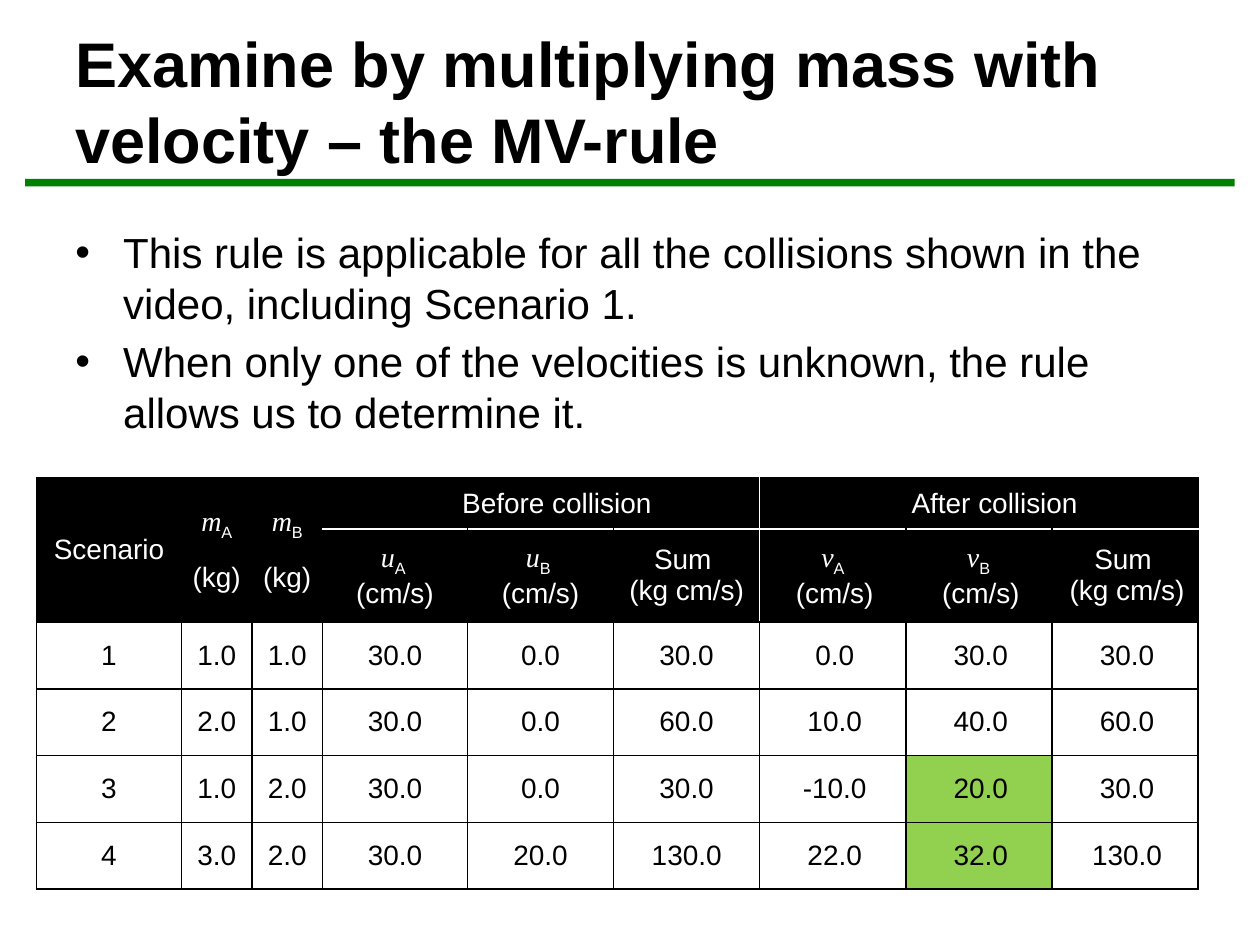
"""Build the slide on the MV-rule with its table of collisions."""
from dataclasses import dataclass

from lxml import etree
from pptx import Presentation
from pptx.dml.color import RGBColor
from pptx.enum.shapes import MSO_SHAPE
from pptx.enum.text import MSO_ANCHOR, PP_ALIGN
from pptx.oxml.ns import qn
from pptx.slide import Slide
from pptx.util import Inches, Pt

RECTANGLE = MSO_SHAPE.RECTANGLE
TOP, MIDDLE = MSO_ANCHOR.TOP, MSO_ANCHOR.MIDDLE
LEFT, CENTER = PP_ALIGN.LEFT, PP_ALIGN.CENTER

BLACK = RGBColor(0, 0, 0)
WHITE = RGBColor(255, 255, 255)
GREEN = RGBColor(0, 128, 0)
LIME = RGBColor(0x92, 0xD0, 0x50)

TITLE = "Examine by multiplying mass with velocity – the MV-rule"
POINTS = [
    "This rule is applicable for all the collisions shown in the video, including Scenario 1.",
    "When only one of the velocities is unknown, the rule allows us to determine it.",
]
COLUMN_WIDTHS = [1.15, 0.56, 0.56, 1.15] + [1.16] * 5
ROW_HEIGHTS = [0.41, 0.42] + [0.53] * 4
HEADER_ROWS = 2
BEFORE_COLUMN, AFTER_COLUMN = 3, 6
MERGES = [(0, 0, 1, 0), (0, 1, 1, 1), (0, 2, 1, 2), (0, 3, 0, 5), (0, 6, 0, 8)]
RESULTS = [
    ["1", "1.0", "1.0", "30.0", "0.0", "30.0", "0.0", "30.0", "30.0"],
    ["2", "2.0", "1.0", "30.0", "0.0", "60.0", "10.0", "40.0", "60.0"],
    ["3", "1.0", "2.0", "30.0", "0.0", "30.0", "-10.0", "20.0", "30.0"],
    ["4", "3.0", "2.0", "30.0", "20.0", "130.0", "22.0", "32.0", "130.0"],
]
HIGHLIGHTS = {(4, 7), (5, 7)}

PLAIN = {}
SYMBOL = {"name": "Times New Roman", "italic": True}
SUBSCRIPT = {"baseline": -25000}


def apply(target, values):
    """Set each attribute named in values on the target."""
    for name, value in values.items():
        setattr(target, name, value)


def mass(letter):
    """Return the heading paragraphs of a mass column."""
    return [[("m", SYMBOL), (letter, SUBSCRIPT)], [("(kg)", PLAIN)]]


def velocity(symbol, letter):
    """Return the heading paragraph of a velocity column."""
    return [[(symbol, SYMBOL), (letter + " \n", SUBSCRIPT), ("(cm/s)", PLAIN)]]


def plain(text):
    """Return one paragraph with a single span."""
    return [[(text, PLAIN)]]


def headings():
    """Return the header contents keyed by row and column."""
    cells = {
        (0, 0): plain("Scenario"),
        (0, 1): mass("A"),
        (0, 2): mass("B"),
        (0, BEFORE_COLUMN): plain("Before collision"),
        (0, AFTER_COLUMN): plain("After collision"),
    }
    for start, symbol in ((BEFORE_COLUMN, "u"), (AFTER_COLUMN, "v")):
        cells[1, start] = velocity(symbol, "A")
        cells[1, start + 1] = velocity(symbol, "B")
        cells[1, start + 2] = plain("Sum \n(kg cm/s)")
    return cells


@dataclass
class SlideBuilder:
    """Hold the style and the current slide."""

    page: Slide
    font_name: str = "Arial"
    border_width: int = Pt(1)

    def bar(self, left, top, width, height, color):
        """Draw a filled bar."""
        bar = self.page.shapes.add_shape(
            RECTANGLE, Inches(left), Inches(top), Inches(width), Inches(height))
        bar.shadow.inherit = False
        bar.fill.solid()
        bar.fill.fore_color.rgb = color
        bar.line.fill.background()

    def spans(self, para, spans, size, color, bold=False):
        """Write formatted spans, turning newlines into line breaks."""
        for text, style in spans:
            for index, line in enumerate(text.split("\n")):
                if index:
                    para.add_line_break()
                if not line:
                    continue
                span = para.add_run()
                span.text = line
                values = {"name": self.font_name, "size": Pt(size), "bold": bold} | style
                baseline = values.pop("baseline", None)
                apply(span.font, values)
                span.font.color.rgb = color
                if baseline:
                    span.font._element.set("baseline", str(baseline))

    def indent(self, para, margin, hanging=0):
        """Set the left margin and hanging indent of a paragraph."""
        properties = para._p.get_or_add_pPr()
        properties.set("marL", str(Inches(margin)))
        properties.set("indent", str(-Inches(hanging)))
        return properties

    def text(self, left, top, width, height, lines, size, anchor, bold=False, bullet=None):
        """Add a wrapped text box with one paragraph for each line."""
        box = self.page.shapes.add_textbox(
            Inches(left), Inches(top), Inches(width), Inches(height))
        frame = box.text_frame
        apply(frame, {"word_wrap": True, "vertical_anchor": anchor})
        for index, line in enumerate(lines):
            para = frame.add_paragraph() if index else frame.paragraphs[0]
            if bullet:
                properties = self.indent(para, 0.38, 0.38)
                etree.SubElement(properties, qn("a:buFont"), typeface=self.font_name)
                etree.SubElement(properties, qn("a:buChar"), char=bullet)
            para.alignment = LEFT
            if index:
                para.space_before = Pt(size * 0.2)
            self.spans(para, [(line, PLAIN)], size, BLACK, bold)

    def borders(self, cell, colors):
        """Draw the four borders of a cell."""
        properties = cell._tc.get_or_add_tcPr()
        for side in "LRTB":
            line = etree.SubElement(properties, qn("a:ln" + side), w=str(self.border_width))
            fill = etree.SubElement(line, qn("a:solidFill"))
            etree.SubElement(fill, qn("a:srgbClr"), val=str(colors.get(side, BLACK)))

    def cell(self, cell, paragraphs, color, fill, margin, edges):
        """Style a table cell and write its paragraphs."""
        self.borders(cell, edges)
        apply(cell, {"vertical_anchor": MIDDLE, "margin_left": Inches(0.07),
                     "margin_right": Inches(0.07), "margin_top": 0, "margin_bottom": 0})
        if fill is None:
            cell.fill.background()
        else:
            cell.fill.solid()
            cell.fill.fore_color.rgb = fill
        for index, spans in enumerate(paragraphs):
            frame = cell.text_frame
            para = frame.add_paragraph() if index else frame.paragraphs[0]
            self.indent(para, margin)
            apply(para, {"alignment": CENTER, "space_before": Pt(6), "space_after": Pt(6)})
            self.spans(para, spans, 16, color)

    def table(self, left, top, contents):
        """Add the collision table."""
        table = self.page.shapes.add_table(
            len(ROW_HEIGHTS), len(COLUMN_WIDTHS), Inches(left), Inches(top),
            Inches(sum(COLUMN_WIDTHS)), Inches(sum(ROW_HEIGHTS))).table
        apply(table, {"first_row": False, "horz_banding": False})
        for column, width in zip(table.columns, COLUMN_WIDTHS):
            column.width = Inches(width)
        for row, height in zip(table.rows, ROW_HEIGHTS):
            row.height = Inches(height)
        for top_row, first, bottom_row, last in MERGES:
            table.cell(top_row, first).merge(table.cell(bottom_row, last))
        for row in range(len(ROW_HEIGHTS)):
            for column in range(len(COLUMN_WIDTHS)):
                header = row < HEADER_ROWS
                edges = {}
                if header and column >= BEFORE_COLUMN:
                    edges["B" if row == 0 else "T"] = WHITE
                    if column == AFTER_COLUMN:
                        edges["L"] = WHITE
                    elif column == AFTER_COLUMN - 1:
                        edges["R"] = WHITE
                margin = 0.03 if column >= AFTER_COLUMN else 0
                if row == 0 and column >= BEFORE_COLUMN:
                    margin = 0.25
                fill = BLACK if header else LIME if (row, column) in HIGHLIGHTS else None
                self.cell(table.cell(row, column), contents.get((row, column), []),
                          WHITE if header else BLACK, fill, margin, edges)


def main():
    """Build and save the deck."""
    deck = Presentation()
    apply(deck, {"slide_width": Inches(10), "slide_height": Inches(7.5)})
    builder = SlideBuilder(deck.slides.add_slide(deck.slide_layouts[6]))
    builder.bar(0.2, 1.42, 9.6, 0.06, GREEN)
    builder.text(0.5, 0.17, 9, 1.25, [TITLE], 36, MIDDLE, bold=True)
    builder.text(0.5, 1.75, 9, 1.75, POINTS, 24, TOP, bullet="•")
    contents = headings()
    for row, values in enumerate(RESULTS, HEADER_ROWS):
        for column, value in enumerate(values):
            contents[row, column] = plain(value)
    builder.table(0.29, 3.79, contents)
    deck.save("out.pptx")


if __name__ == "__main__":
    main()
